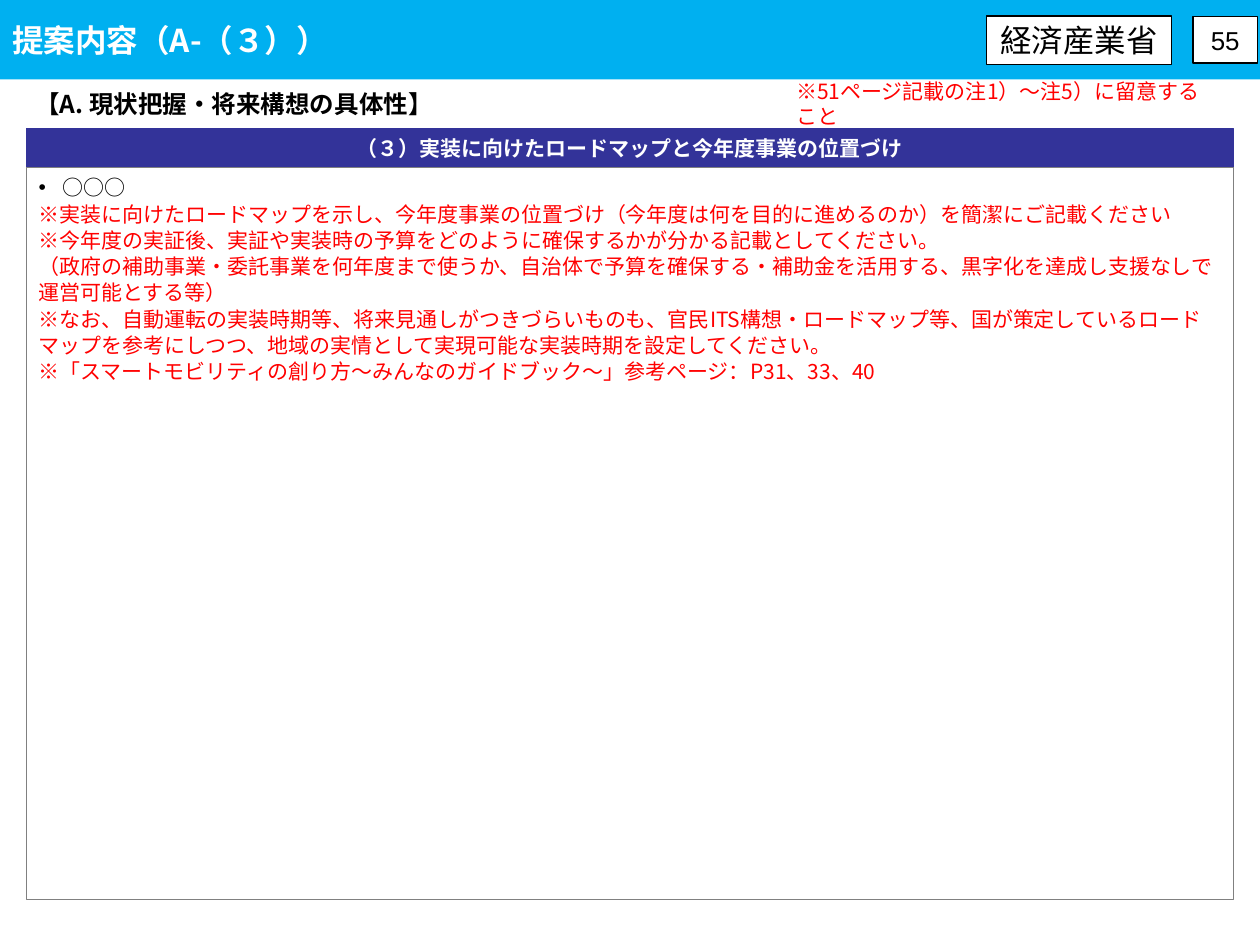
import pptx
import pptx.dml.color
import pptx.enum.shapes
import pptx.enum.text
import pptx.util
from lxml import etree
from pptx.oxml.ns import qn

Cm, Pt = pptx.util.Cm, pptx.util.Pt
ALIGN = pptx.enum.text.PP_ALIGN
ANCHOR = pptx.enum.text.MSO_ANCHOR
JP, LATIN = "Noto Sans CJK JP", "Arial"
COLORS = {
    "banner": "00B0F0",
    "header": "333399",
    "frame": "808080",
    "note": "FF0000",
    "black": "000000",
    "white": "FFFFFF",
}
GUIDANCE = [
    "※実装に向けたロードマップを示し、今年度事業の位置づけ（今年度は何を目的に進めるのか）を簡潔にご記載ください",
    "※今年度の実証後、実証や実装時の予算をどのように確保するかが分かる記載としてください。",
    "（政府の補助事業・委託事業を何年度まで使うか、自治体で予算を確保する・補助金を活用する、"
    "黒字化を達成し支援なしで運営可能とする等）",
    "※なお、自動運転の実装時期等、将来見通しがつきづらいものも、官民ITS構想・ロードマップ等、"
    "国が策定しているロードマップを参考にしつつ、地域の実情として実現可能な実装時期を設定してください。",
    "※「スマートモビリティの創り方～みんなのガイドブック～」参考ページ：P31、33、40",
]


def rgb(name):
    return pptx.dml.color.RGBColor.from_string(COLORS[name])


def add_text(sp, text, size=12, color="black", bold=False, font=JP,
             align=ALIGN.LEFT, anchor=ANCHOR.MIDDLE, spacing=None, bullet=False):
    """Write text as the next paragraph of the shape."""
    tf = sp.text_frame
    tf.word_wrap = True
    tf.vertical_anchor = anchor
    p = tf.add_paragraph() if tf.text else tf.paragraphs[0]
    p.alignment = align
    if spacing:
        p.line_spacing = Pt(spacing)
    if bullet:
        pPr = p._p.get_or_add_pPr()
        indent = Cm(0.48)
        pPr.set("marL", str(indent))
        pPr.set("indent", str(-indent))
        etree.SubElement(pPr, qn("a:buFont")).set("typeface", LATIN)
        etree.SubElement(pPr, qn("a:buChar")).set("char", "•")
    r = p.add_run()
    r.text = text
    r.font.size = Pt(size)
    r.font.bold = bold
    r.font.name = font
    r.font.color.rgb = rgb(color)
    etree.SubElement(r._r.get_or_add_rPr(), qn("a:ea")).set("typeface", JP)


def add_box(slide, x, y, w, h, fill=None, line=None, line_width=0.5):
    sp = slide.shapes.add_shape(pptx.enum.shapes.MSO_SHAPE.RECTANGLE,
                                Cm(x), Cm(y), Cm(w), Cm(h))
    sp.shadow.inherit = False
    if fill:
        sp.fill.solid()
        sp.fill.fore_color.rgb = rgb(fill)
    else:
        sp.fill.background()
    if line:
        sp.line.color.rgb = rgb(line)
        sp.line.width = Pt(line_width)
    else:
        sp.line.fill.background()
    return sp


def add_banner(slide, x, y, w, h):
    """Title band with the ministry label and the page number."""
    title = add_box(slide, x, y, w, h, fill="banner")
    add_text(title, "提案内容（A-（３））", size=18, color="white", bold=True)
    ministry = add_box(slide, x + w - 5.51, y + 0.33, 3.73, 0.97, "white", "black", 1)
    add_text(ministry, "経済産業省", size=18, font=LATIN, align=ALIGN.CENTER)
    page = add_box(slide, x + w - 1.35, y + 0.33, 1.3, 0.94, "white", "black", 0.75)
    add_text(page, "55", size=14.8, font=LATIN, align=ALIGN.CENTER)


def add_heading(slide, x, y, w, h):
    """Criterion on the left and reminder on the right, equally wide."""
    part = 9.04
    criterion = slide.shapes.add_textbox(Cm(x), Cm(y), Cm(part), Cm(h))
    add_text(criterion, "【A. 現状把握・将来構想の具体性】", size=14, bold=True,
             anchor=ANCHOR.TOP)
    reminder = slide.shapes.add_textbox(Cm(x + w - part), Cm(y), Cm(part), Cm(h))
    add_text(reminder, "※51ページ記載の注1）～注5）に留意すること", color="note")


def add_section(slide, x, y, w, h):
    """Header bar with the framed answer area below it."""
    bar = 0.79
    header = add_box(slide, x, y, w, bar, "header", "header")
    add_text(header, "（３）実装に向けたロードマップと今年度事業の位置づけ", color="white",
             bold=True, font=LATIN, align=ALIGN.CENTER, spacing=15)
    body = add_box(slide, x, y + bar, w, h - bar, line="frame")
    add_text(body, "○○○", anchor=ANCHOR.TOP, spacing=15, bullet=True)
    for text in GUIDANCE:
        add_text(body, text, color="note", anchor=ANCHOR.TOP, spacing=15)


def main():
    prs = pptx.Presentation()
    prs.slide_width, prs.slide_height = Cm(25.4), Cm(19.05)
    slide = prs.slides.add_slide(prs.slide_layouts[6])
    add_banner(slide, 0, 0, 25.4, 1.6)
    add_heading(slide, 0.46, 1.68, 24.38, 0.82)
    add_section(slide, 0.53, 2.59, 24.33, 15.55)
    prs.save("out.pptx")


if __name__ == "__main__":
    main()
